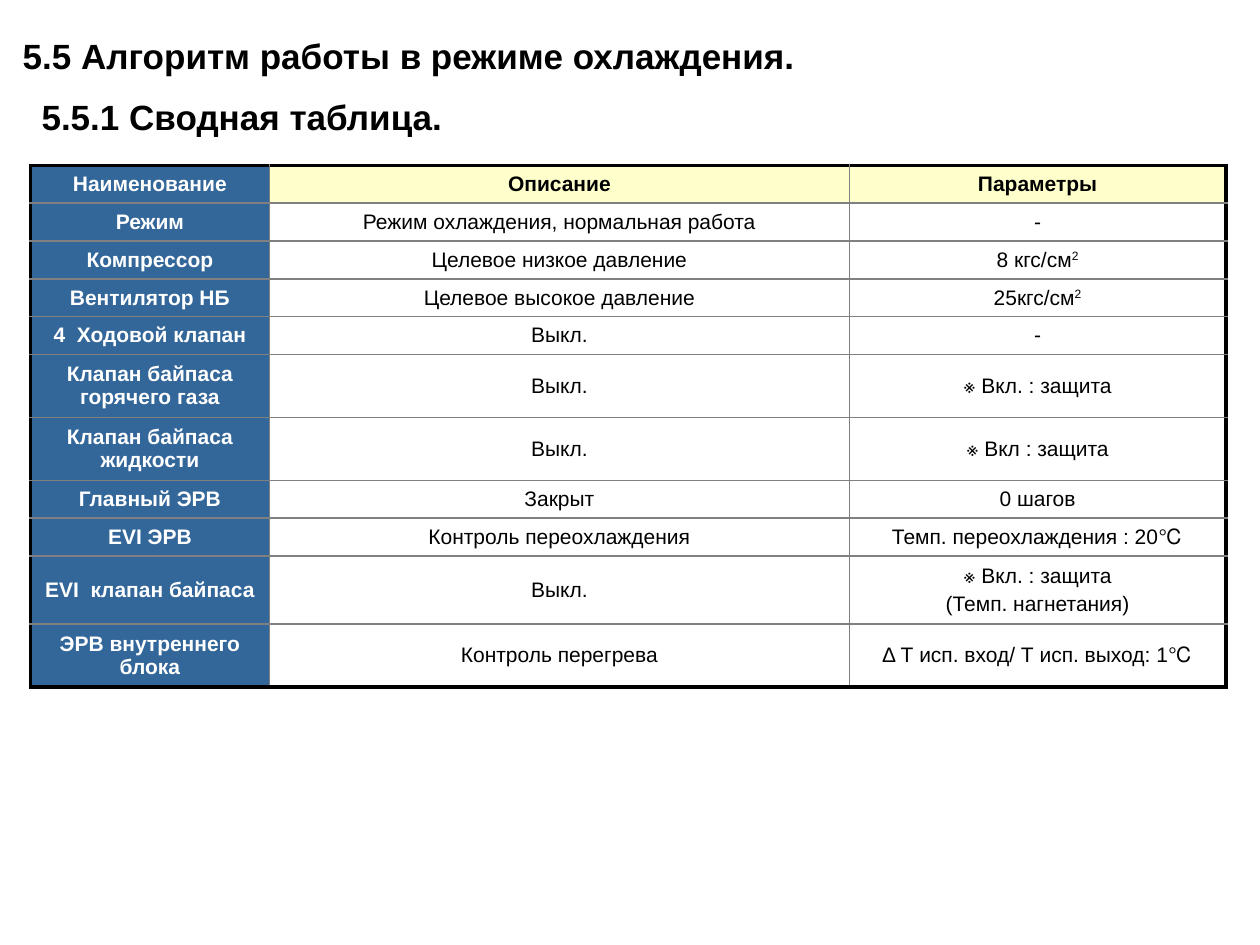
import lxml.etree
import pptx
import pptx.dml.color
import pptx.enum.text
import pptx.oxml.ns
import pptx.util

RGBColor = pptx.dml.color.RGBColor
BLACK = RGBColor(0x00, 0x00, 0x00)
WHITE = RGBColor(0xFF, 0xFF, 0xFF)
GRAY = RGBColor(0x80, 0x80, 0x80)
BLUE = RGBColor(0x33, 0x66, 0x99)
CREAM = RGBColor(0xFF, 0xFF, 0xCC)

TITLE_LINES = ["5.5 Алгоритм работы в режиме охлаждения.", "5.5.1 Сводная таблица."]
COLUMN_WIDTHS = [1.9, 4.6, 2.99]
SINGLE, DOUBLE, SPACED = 0.3, 0.5, 0.54
TABLE_ROWS = [
    (SINGLE, "Наименование", "Описание", "Параметры"),
    (SINGLE, "Режим", "Режим охлаждения, нормальная работа", "-"),
    (SINGLE, "Компрессор", "Целевое низкое давление", "8 кгс/см^2"),
    (SINGLE, "Вентилятор НБ", "Целевое высокое давление", "25кгс/см^2"),
    (SINGLE, "4  Ходовой клапан", "Выкл.", "-"),
    (DOUBLE, "Клапан байпаса горячего газа", "Выкл.", "※ Вкл. : защита"),
    (DOUBLE, "Клапан байпаса жидкости", "Выкл.", "※ Вкл : защита"),
    (SINGLE, "Главный ЭРВ", "Закрыт", "0 шагов"),
    (SINGLE, "EVI ЭРВ", "Контроль переохлаждения", "Темп. переохлаждения : 20℃"),
    (SPACED, "EVI  клапан байпаса", "Выкл.", "※ Вкл. : защита\n(Темп. нагнетания)"),
    (DOUBLE, "ЭРВ внутреннего блока", "Контроль перегрева", "Δ Т исп. вход/ Т исп. выход: 1℃"),
]


def write_text(paragraph, text, font="Arial", size=12, color=BLACK, bold=False):
    for index, part in enumerate(text.split("^")):
        run = paragraph.add_run()
        run.text = part
        run.font.name = font
        run.font.size = pptx.util.Pt(size)
        run.font.color.rgb = color
        run.font.bold = bold
        if index:
            run.font._element.set("baseline", "30000")


class SlideBuilder:
    def __init__(self, presentation):
        self.width = presentation.slide_width
        self.height = presentation.slide_height
        self.slide = presentation.slides.add_slide(presentation.slide_layouts[5])

    def box(self, left, top, width, height):
        return (round(left * self.width), round(top * self.height),
                round(width * self.width), round(height * self.height))

    def title(self, lines, area):
        shape = self.slide.shapes.title
        shape.left, shape.top, shape.width, shape.height = self.box(*area)
        frame = shape.text_frame
        frame.word_wrap = True
        frame.auto_size = pptx.enum.text.MSO_AUTO_SIZE.NONE
        frame.vertical_anchor = pptx.enum.text.MSO_ANCHOR.TOP
        for index, line in enumerate(lines):
            paragraph = frame.add_paragraph() if index else frame.paragraphs[0]
            paragraph.alignment = pptx.enum.text.PP_ALIGN.LEFT
            if index:
                paragraph.space_before = pptx.util.Pt(11)
                paragraph._p.get_or_add_pPr().set("marL", str(pptx.util.Inches(0.15)))
            write_text(paragraph, line, size=20, bold=True)

    def border(self, cell, side, color, width):
        properties = cell._tc.get_or_add_tcPr()
        tag = pptx.oxml.ns.qn
        line = lxml.etree.SubElement(properties, tag("a:ln" + side), w=str(pptx.util.Pt(width)))
        fill = lxml.etree.SubElement(line, tag("a:solidFill"))
        lxml.etree.SubElement(fill, tag("a:srgbClr"), val=str(color))

    def cell(self, cell, text, fill, color, bold, outer):
        for side, is_outer in zip("LRTB", outer):
            self.border(cell, side, *((BLACK, 2.25) if is_outer else (GRAY, 1)))
        if fill is None:
            cell.fill.background()
        else:
            cell.fill.solid()
            cell.fill.fore_color.rgb = fill
        cell.vertical_anchor = pptx.enum.text.MSO_ANCHOR.MIDDLE
        frame = cell.text_frame
        for index, line in enumerate(text.split("\n")):
            paragraph = frame.add_paragraph() if index else frame.paragraphs[0]
            paragraph.alignment = pptx.enum.text.PP_ALIGN.CENTER
            if index:
                paragraph.space_before = pptx.util.Pt(2.4)
            write_text(paragraph, line, color=color, bold=bold)

    def table(self, rows, widths, area):
        table = self.slide.shapes.add_table(len(rows), len(widths), *self.box(*area)).table
        table.first_row = False
        table.horz_banding = False
        for column, width in zip(table.columns, widths):
            column.width = pptx.util.Inches(width)
        for row_index, (height, *texts) in enumerate(rows):
            table.rows[row_index].height = pptx.util.Inches(height)
            for column_index, text in enumerate(texts):
                is_name, is_header = column_index == 0, row_index == 0
                fill = BLUE if is_name else CREAM if is_header else None
                outer = (is_name, column_index == len(widths) - 1,
                         is_header, row_index == len(rows) - 1)
                self.cell(table.cell(row_index, column_index), text, fill,
                          WHITE if is_name else BLACK, is_name or is_header, outer)


def main():
    presentation = pptx.Presentation()
    presentation.slide_width = pptx.util.Inches(10)
    presentation.slide_height = pptx.util.Inches(7.5)
    builder = SlideBuilder(presentation)
    builder.title(TITLE_LINES, (0.008, 0.03, 0.713, 0.124))
    builder.table(TABLE_ROWS, COLUMN_WIDTHS, (0.024, 0.175, 0.949, 0.552))
    presentation.save("out.pptx")


if __name__ == "__main__":
    main()
